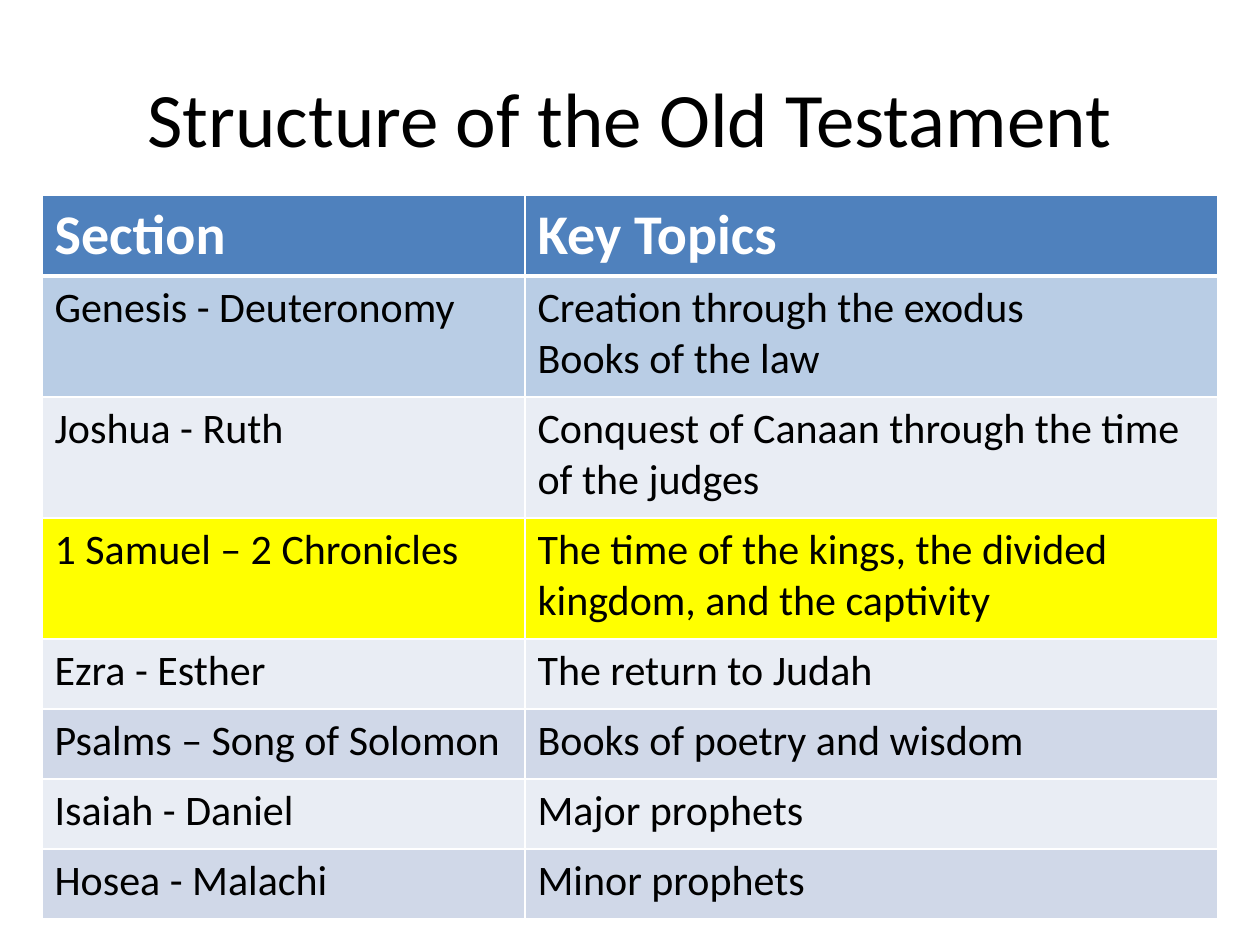
from lxml.etree import SubElement
from pptx import Presentation
from pptx.dml.color import RGBColor
from pptx.enum.text import MSO_ANCHOR, PP_ALIGN
from pptx.oxml.ns import qn
from pptx.util import Emu, Pt

PX_PER_INCH = 126
COLORS = {
    "header": "4F81BD",
    "law": "B9CDE5",
    "light": "E9EDF4",
    "highlight": "FFFF00",
    "band": "D0D8E8",
    "text": "000000",
    "white": "FFFFFF",
}
HEADER_HEIGHT, TALL, SHORT = 80, 121, 70
COLUMN_WIDTHS = (483, 693)
ROWS = [
    ("Section", "Key Topics", "header", HEADER_HEIGHT),
    ("Genesis - Deuteronomy", "Creation through the exodus\nBooks of the law", "law", TALL),
    ("Joshua - Ruth", "Conquest of Canaan through the time of the judges", "light", TALL),
    ("1 Samuel – 2 Chronicles",
     "The time of the kings, the divided kingdom, and the captivity", "highlight", TALL),
    ("Ezra - Esther", "The return to Judah", "light", SHORT),
    ("Psalms – Song of Solomon", "Books of poetry and wisdom", "band", SHORT),
    ("Isaiah - Daniel", "Major prophets", "light", SHORT),
    ("Hosea - Malachi", "Minor prophets", "band", SHORT),
]


def px(length):
    """Turn whole pixels into EMU."""
    return Emu(round(length * 914400 / PX_PER_INCH))


def color(name):
    """Look up a named colour."""
    return RGBColor.from_string(COLORS[name])


def style_font(paragraph, size, color_name, bold=False):
    """Format all the text of a paragraph."""
    font = paragraph.font
    font.name, font.size, font.bold = "Calibri", Pt(size), bold
    font.color.rgb = color(color_name)


def add_borders(cell, top, bottom):
    """Draw white cell borders, with top and bottom widths in points."""
    properties = cell._tc.get_or_add_tcPr()
    for side, width in (("L", 1), ("R", 1), ("T", top), ("B", bottom)):
        line = SubElement(properties, qn(f"a:ln{side}"), w=str(Pt(width)))
        fill = SubElement(line, qn("a:solidFill"))
        SubElement(fill, qn("a:srgbClr"), val=COLORS["white"])


def build_title(slide, left, top, width, height):
    """Place and format the slide title."""
    title = slide.shapes.title
    title.left, title.top, title.width, title.height = map(px, (left, top, width, height))
    frame = title.text_frame
    frame.text = "Structure of the Old Testament"
    frame.vertical_anchor = MSO_ANCHOR.MIDDLE
    paragraph = frame.paragraphs[0]
    paragraph.alignment = PP_ALIGN.CENTER
    style_font(paragraph, 44, "text")


def build_sections_table(slide, left, top):
    """Place the table of Old Testament sections and topics."""
    width, height = sum(COLUMN_WIDTHS), sum(row[-1] for row in ROWS)
    table = slide.shapes.add_table(
        len(ROWS), len(COLUMN_WIDTHS), *map(px, (left, top, width, height))).table
    for column, column_width in zip(table.columns, COLUMN_WIDTHS):
        column.width = px(column_width)
    for index, (*texts, fill, row_height) in enumerate(ROWS):
        is_header = index == 0
        table.rows[index].height = px(row_height)
        for cell, text in zip(table.rows[index].cells, texts):
            cell.text = text
            add_borders(cell, 3 if index == 1 else 1, 3 if is_header else 1)
            cell.fill.solid()
            cell.fill.fore_color.rgb = color(fill)
            for paragraph in cell.text_frame.paragraphs:
                if is_header:
                    style_font(paragraph, 32, "white", bold=True)
                else:
                    style_font(paragraph, 24, "text")


def main():
    """Build and save the presentation."""
    presentation = Presentation()
    presentation.slide_width, presentation.slide_height = px(1260), px(945)
    slide = presentation.slides.add_slide(presentation.slide_layouts[5])
    build_title(slide, 63, 38, 1134, 157)
    build_sections_table(slide, 42, 195)
    presentation.save("out.pptx")


if __name__ == "__main__":
    main()
